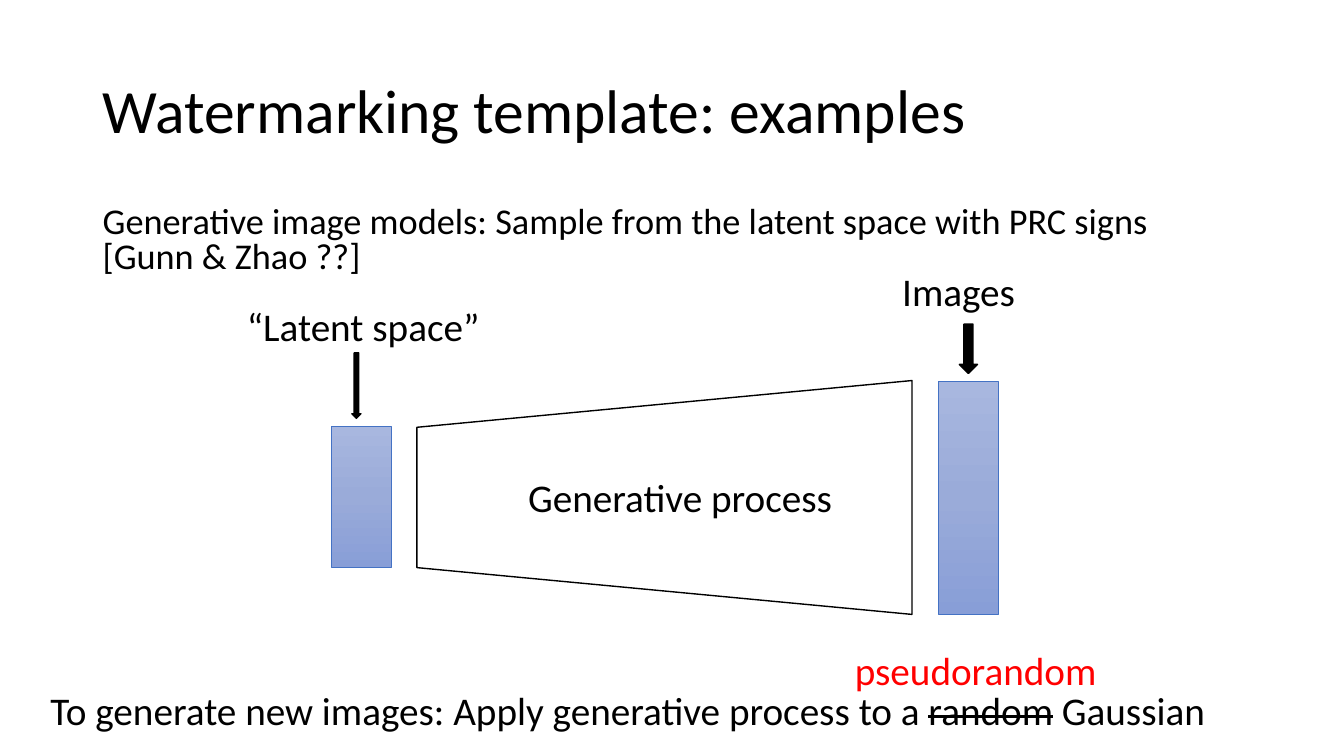
import copy

import pptx
import pptx.dml.color
import pptx.enum.shapes
import pptx.enum.text
import pptx.oxml.ns
import pptx.util

COLORS = {
    "ink": "000000",
    "paper": "FFFFFF",
    "accent": "FF0000",
    "edge": "4472C4",
    "light": "A8B7DF",
    "middle": "9AABD9",
    "dark": "889ED7",
}
SHAPE = pptx.enum.shapes.MSO_SHAPE
ANCHOR = pptx.enum.text.MSO_ANCHOR


class Deck:
    font = "Calibri"
    body = 28

    def __init__(self, width, height):
        self.prs = pptx.Presentation()
        self.prs.slide_width = pptx.util.Inches(width)
        self.prs.slide_height = pptx.util.Inches(height)
        self.s = self.prs.slides.add_slide(self.prs.slide_layouts[6])

    def color(self, name):
        return pptx.dml.color.RGBColor.from_string(COLORS[name])

    def text(self, box, *parts, size=body, color="ink", wrap=True,
             anchor=ANCHOR.TOP, spacing=None, before=0, struck=None):
        sp = self.s.shapes.add_textbox(*map(pptx.util.Inches, box))
        tf = sp.text_frame
        tf.word_wrap = wrap
        tf.vertical_anchor = anchor
        p = tf.paragraphs[0]
        p.line_spacing = spacing
        p.space_before = pptx.util.Pt(before)
        for part in parts:
            r = p.add_run()
            r.text = part
            r.font.name = self.font
            r.font.size = pptx.util.Pt(size)
            r.font.color.rgb = self.color(color)
            if part == struck:
                r._r.get_or_add_rPr().set("strike", "sngStrike")

    def shape(self, kind, box, fill="ink", line="ink", weight=1, rotation=0):
        sp = self.s.shapes.add_shape(kind, *map(pptx.util.Inches, box))
        sp.shadow.inherit = False
        sp.rotation = rotation
        sp.fill.solid()
        sp.fill.fore_color.rgb = self.color(fill)
        sp.line.color.rgb = self.color(line)
        sp.line.width = pptx.util.Pt(weight)
        return sp

    def block(self, box):
        sp = self.shape(SHAPE.RECTANGLE, box, line="edge", weight=0.5)
        sp.fill.gradient()
        sp.fill.gradient_angle = 270
        stops = sp._element.spPr.find(".//" + pptx.oxml.ns.qn("a:gsLst"))
        stops.insert(1, copy.deepcopy(stops[0]))
        for i, name in enumerate(("light", "middle", "dark")):
            stop = sp.fill.gradient_stops[i]
            stop.color.rgb = self.color(name)
            stop.position = i / 2

    def arrow(self, box):
        self.shape(SHAPE.RIGHT_ARROW, box, rotation=90)

    def label(self, box, text, color="ink"):
        self.text(box, text, color=color, wrap=False)


def main():
    deck = Deck(13.33, 7.5)
    deck.text((0.92, 0.4, 11.5, 1.45), "Watermarking template: examples",
              size=44, anchor=ANCHOR.MIDDLE, spacing=0.9)
    deck.shape(SHAPE.FLOWCHART_MANUAL_OPERATION, (5.43, 2.48, 2.32, 4.91),
               fill="paper", rotation=90)
    deck.label((5.14, 4.65, 3.25, 0.57), "Generative process")

    deck.block((3.29, 4.23, 0.59, 1.4))
    deck.label((2.35, 2.95, 2.54, 0.57), "“Latent space”")
    deck.arrow((3.21, 3.78, 0.65, 0.09))

    deck.text((0.4, 6.81, 12.02, 0.57),
              "To generate new images: Apply generative process to a ",
              "random", " Gaussian", spacing=0.9, before=10, struck="random")

    deck.block((9.31, 3.78, 0.59, 2.32))
    deck.label((8.85, 2.6, 1.33, 0.57), "Images")
    deck.arrow((9.36, 3.37, 0.49, 0.18))

    deck.label((8.38, 6.36, 2.63, 0.57), "pseudorandom", color="accent")
    deck.text((0.92, 2, 11.5, 0.84),
              "Generative image models: Sample from the latent space "
              "with PRC signs [Gunn & Zhao ??]",
              size=25.9, spacing=0.8, before=10)
    deck.prs.save("out.pptx")


if __name__ == "__main__":
    main()
